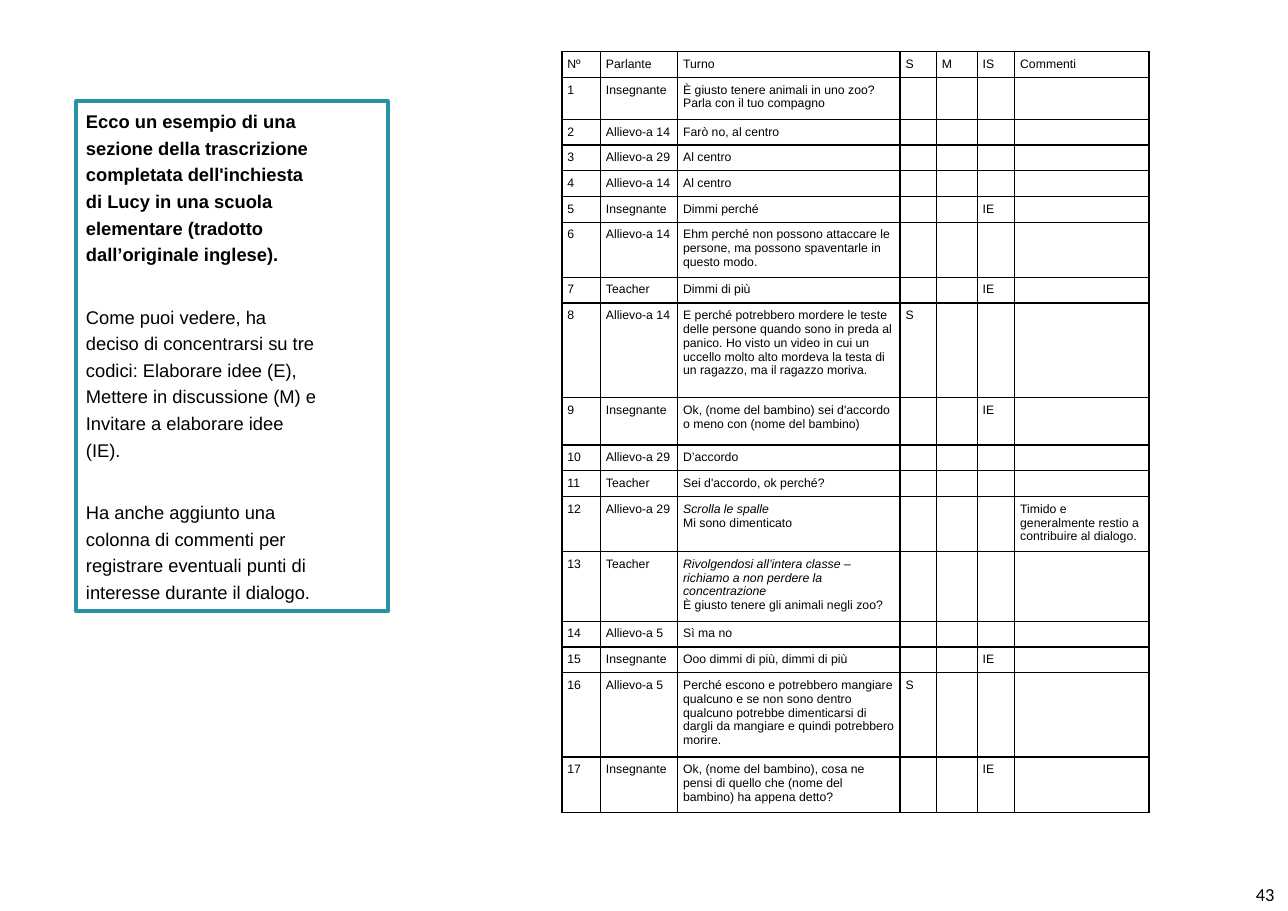
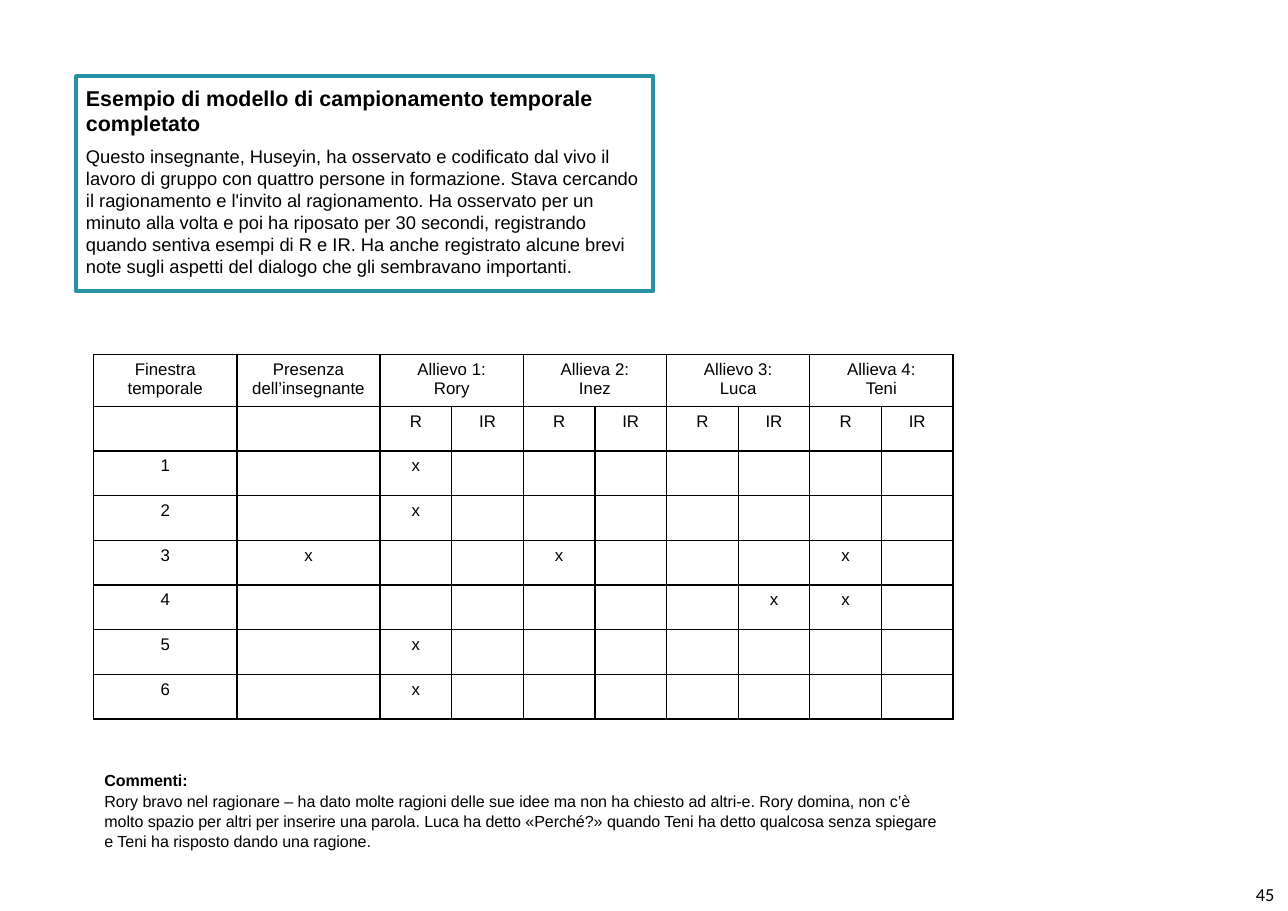
from dataclasses import dataclass

from lxml import etree
from pptx import Presentation
from pptx import util as u
from pptx.dml.color import RGBColor
from pptx.enum import shapes, text
from pptx.oxml.ns import qn


@dataclass(frozen=True)
class Theme:
    ink: str = "000000"
    teal: str = "2791A6"
    font: str = "Arial"
    page_font: str = "Calibri"
    head: float = 14
    body: float = 12
    grid: float = 11
    note: float = 10.5
    small: float = 8
    frame: float = 2.5
    rule: float = 1


class Deck:
    def __init__(self, theme):
        self.theme = theme
        self.file = Presentation()
        self.file.slide_width = u.Inches(11.69)
        self.file.slide_height = u.Inches(8.27)
        self.slide = None

    def start(self, page):
        """Open a blank slide and put its page number in the corner."""
        self.slide = self.file.slides.add_slide(self.file.slide_layouts[6])
        box = self.label([str(page)], (11.3, 7.97, 0.37, 0.3), self.theme.body,
                         font=self.theme.page_font)
        box.text_frame.word_wrap = False

    def style(self, para, size, bold=False, font=None):
        for run in para.runs:
            run.font.name = font or self.theme.font
            run.font.size = u.Pt(size)
            run.font.bold = bold
            run.font.color.rgb = RGBColor.from_string(self.theme.ink)

    def inset(self, item, left, top, right, bottom):
        item.margin_left, item.margin_top = u.Inches(left), u.Inches(top)
        item.margin_right, item.margin_bottom = u.Inches(right), u.Inches(bottom)

    def label(self, paras, place, size, font=None):
        box = self.slide.shapes.add_textbox(*map(u.Inches, place))
        frame = box.text_frame
        frame.word_wrap = True
        self.inset(frame, 0.1, 0.05, 0.1, 0.05)
        frame.text = "\n".join(paras)
        for para in frame.paragraphs:
            self.style(para, size, font=font)
        return box

    def panel(self, paras, place, inset, gap, head=None, space=1.0):
        """Framed box whose first paragraph is bold."""
        box = self.slide.shapes.add_shape(
            shapes.MSO_SHAPE.RECTANGLE, *map(u.Inches, place))
        box.shadow.inherit = False
        box.fill.background()
        box.line.color.rgb = RGBColor.from_string(self.theme.teal)
        box.line.width = u.Pt(self.theme.frame)
        frame = box.text_frame
        frame.word_wrap = True
        frame.vertical_anchor = text.MSO_ANCHOR.TOP
        self.inset(frame, *inset)
        frame.text = "\n".join(paras)
        for i, para in enumerate(frame.paragraphs):
            first = i == 0
            para.alignment = text.PP_ALIGN.LEFT
            para.line_spacing = space
            para.space_before = u.Pt(0 if first else gap)
            size = head if first and head else self.theme.body
            self.style(para, size, bold=first)

    def border(self, cell):
        props = cell._tc.get_or_add_tcPr()
        for i, side in enumerate(("lnL", "lnR", "lnT", "lnB")):
            line = etree.Element(qn("a:" + side), w=str(int(u.Pt(self.theme.rule))))
            fill = etree.SubElement(line, qn("a:solidFill"))
            etree.SubElement(fill, qn("a:srgbClr"), val=self.theme.ink)
            props.insert(i, line)

    def table(self, rows, left, top, widths, heights, size, inset,
              align=text.PP_ALIGN.LEFT):
        frame = self.slide.shapes.add_table(
            len(rows), len(widths), u.Inches(left), u.Inches(top),
            u.Inches(sum(widths)), u.Inches(sum(heights)))
        table = frame.table
        table.first_row = table.horz_banding = False
        for col, width in zip(table.columns, widths):
            col.width = u.Inches(width)
        for r, row in enumerate(rows):
            table.rows[r].height = u.Inches(heights[r])
            for c in range(len(widths)):
                cell = table.cell(r, c)
                self.inset(cell, *inset)
                cell.fill.background()
                self.border(cell)
                cell.text_frame.text = row.get(c, "")
                for para in cell.text_frame.paragraphs:
                    para.alignment = align
                    self.style(para, size)
                    if not para.runs:
                        etree.SubElement(para._p, qn("a:endParaRPr"),
                                         sz=str(int(size * 100)))
        return table


# Speaker, turn, and any codes or comments by column
TURNS = [
    ("Insegnante", "È giusto tenere animali in uno zoo? Parla con il tuo compagno", {}),
    ("Allievo-a 14", "Farò no, al centro", {}),
    ("Allievo-a 29", "Al centro", {}),
    ("Allievo-a 14", "Al centro", {}),
    ("Insegnante", "Dimmi perché", {5: "IE"}),
    ("Allievo-a 14", "Ehm perché non possono attaccare le persone, ma possono "
     "spaventarle in questo modo.", {}),
    ("Teacher", "Dimmi di più", {5: "IE"}),
    ("Allievo-a 14", "E perché potrebbero mordere le teste delle persone quando "
     "sono in preda al panico. Ho visto un video in cui un uccello molto alto "
     "mordeva la testa di un ragazzo, ma il ragazzo moriva.", {3: "S"}),
    ("Insegnante", "Ok, (nome del bambino) sei d'accordo o meno con "
     "(nome del bambino)", {5: "IE"}),
    ("Allievo-a 29", "D’accordo", {}),
    ("Teacher", "Sei d'accordo, ok perché?", {}),
    ("Allievo-a 29", "Scrolla le spalle\nMi sono dimenticato",
     {6: "Timido e generalmente restio a contribuire al dialogo."}),
    ("Teacher", "Rivolgendosi all’intera classe – richiamo a non perdere la "
     "concentrazione\nÈ giusto tenere gli animali negli zoo?", {}),
    ("Allievo-a 5", "Sì ma no", {}),
    ("Insegnante", "Ooo dimmi di più, dimmi di più", {5: "IE"}),
    ("Allievo-a 5", "Perché escono e potrebbero mangiare qualcuno e se non sono "
     "dentro qualcuno potrebbe dimenticarsi di dargli da mangiare e quindi "
     "potrebbero morire.", {3: "S"}),
    ("Insegnante", "Ok, (nome del bambino), cosa ne pensi di quello che (nome del "
     "bambino) ha appena detto?", {5: "IE"}),
]
TALL = {1: 0.38, 6: 0.5, 8: 0.86, 9: 0.43, 12: 0.5, 13: 0.63, 16: 0.76, 17: 0.5}
PUPILS = ["Allievo 1:\nRory", "Allieva 2:\nInez", "Allievo 3:\nLuca", "Allieva 4:\nTeni"]
MARKS = [(2,), (2,), (1, 4, 8), (7, 8), (2,), (2,)]


def script_slide(deck):
    deck.start(43)
    deck.panel([
        "Ecco un esempio di una sezione della trascrizione completata "
        "dell'inchiesta di Lucy in una scuola elementare (tradotto "
        "dall’originale inglese).",
        "Come puoi vedere, ha deciso di concentrarsi su tre codici: Elaborare "
        "idee (E), Mettere in discussione (M) e Invitare a elaborare idee (IE).",
        "Ha anche aggiunto una colonna di commenti per registrare eventuali "
        "punti di interesse durante il dialogo.",
    ], (0.69, 0.92, 2.83, 4.63), (0.09, 0.04, 0.62, 0), gap=23.3, space=1.21)
    heads = ["Nº", "Parlante", "Turno", "S", "M", "IS", "Commenti"]
    rows = [dict(enumerate(heads))]
    for n, (who, turn, codes) in enumerate(TURNS, 1):
        rows.append({0: str(n), 1: who, 2: turn, **codes})
    table = deck.table(
        rows, 5.1, 0.47, [0.35, 0.7, 2.02, 0.33, 0.37, 0.34, 1.22],
        [TALL.get(r, 0.23) for r in range(len(rows))],
        deck.theme.small, [0.05] * 4)
    for r in (12, 13):
        stage = table.cell(r, 2).text_frame.paragraphs[0]
        stage.runs[0].font.italic = True


def sample_slide(deck):
    deck.start(45)
    deck.panel([
        "Esempio di modello di campionamento temporale completato",
        "Questo insegnante, Huseyin, ha osservato e codificato dal vivo il lavoro "
        "di gruppo con quattro persone in formazione. Stava cercando il "
        "ragionamento e l'invito al ragionamento. Ha osservato per un minuto alla "
        "volta e poi ha riposato per 30 secondi, registrando quando sentiva esempi "
        "di R e IR. Ha anche registrato alcune brevi note sugli aspetti del "
        "dialogo che gli sembravano importanti.",
    ], (0.69, 0.69, 5.24, 1.95), (0.09, 0.08, 0.08, 0), gap=5.9,
        head=deck.theme.head)
    pairs = range(2, 10, 2)
    rows = [{0: "Finestra temporale", 1: "Presenza dell’insegnante",
             **dict(zip(pairs, PUPILS))},
            {c: "IR" if c % 2 else "R" for c in range(2, 10)}]
    for n, marks in enumerate(MARKS, 1):
        rows.append({0: str(n), **dict.fromkeys(marks, "x")})
    table = deck.table(
        rows, 0.85, 3.22, [1.3] * 2 + [0.65] * 8, [0.47] + [2.84 / 7] * 7,
        deck.theme.grid, (0.1, 0.05, 0.1, 0.05), text.PP_ALIGN.CENTER)
    for c in pairs:
        table.cell(0, c).merge(table.cell(0, c + 1))
    note = deck.label([
        "Commenti:",
        "Rory bravo nel ragionare – ha dato molte ragioni delle sue idee ma non ha "
        "chiesto ad altri-e. Rory domina, non c’è molto spazio per altri per "
        "inserire una parola. Luca ha detto «Perché?» quando Teni ha detto qualcosa "
        "senza spiegare e Teni ha risposto dando una ragione.",
    ], (0.85, 6.94, 7.8, 0.81), deck.theme.note)
    for para in note.text_frame.paragraphs:
        para.line_spacing = 1.05
    note.text_frame.paragraphs[0].runs[0].font.bold = True


def main():
    deck = Deck(Theme())
    script_slide(deck)
    sample_slide(deck)
    deck.file.save("out.pptx")


if __name__ == "__main__":
    main()
